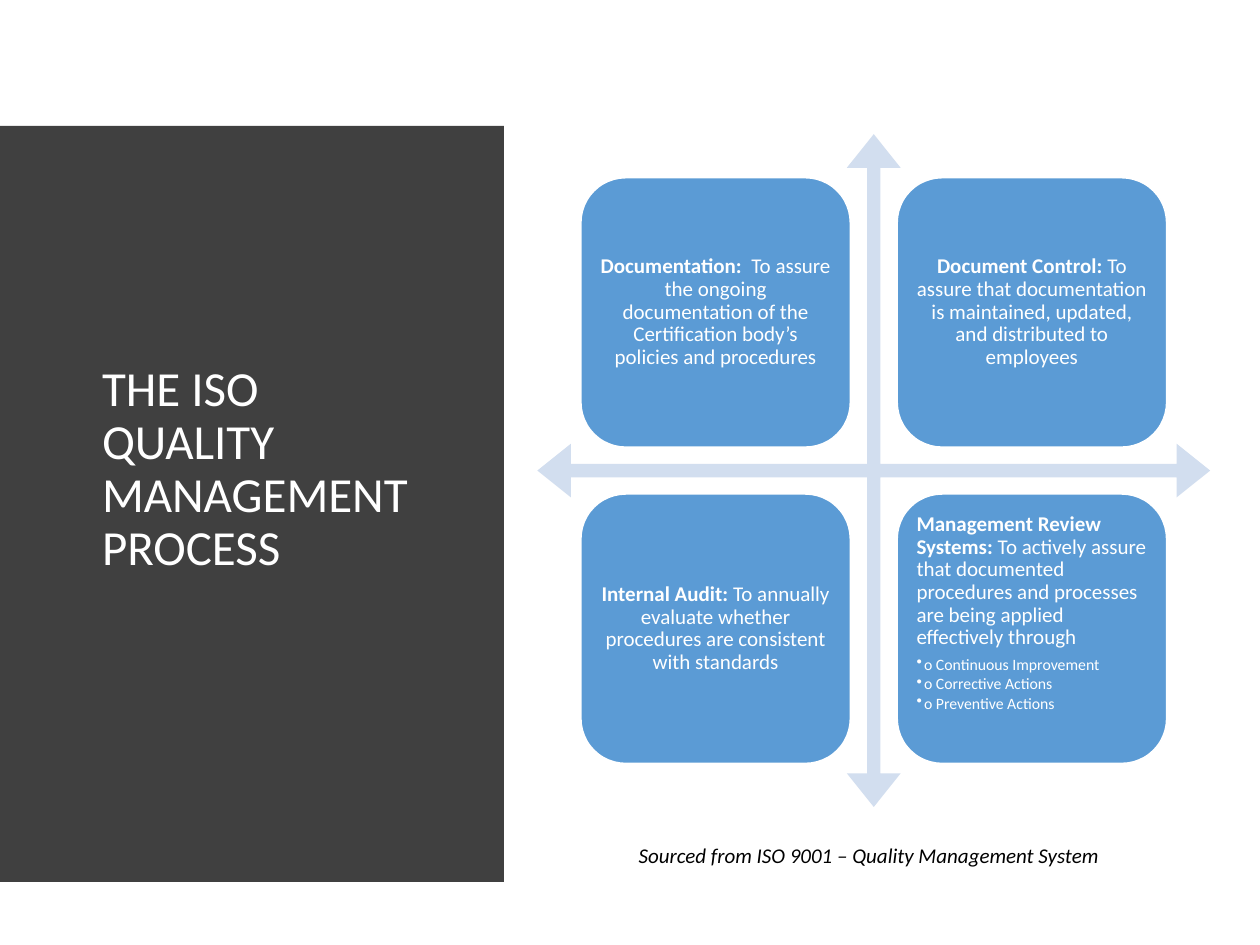
from dataclasses import dataclass

from lxml import etree
from pptx import Presentation
from pptx import util as u
from pptx.dml.color import RGBColor
from pptx.enum import shapes, text
from pptx.oxml.ns import qn


@dataclass(frozen=True)
class Theme:
    font: str = "Calibri"
    panel: str = "404040"
    card: str = "5B9BD5"
    arrows: str = "D2DEEF"
    light: str = "FFFFFF"
    dark: str = "000000"
    title_size: int = 28
    body_size: int = 12
    bullet_size: int = 9
    line_spacing: float = 0.9


@dataclass(frozen=True)
class Card:
    col: int
    row: int
    heading: str
    body: str
    bullets: tuple[str, ...] = ()


THEME = Theme()
WIDTH, HEIGHT = 10, 7.5
GRID_LEFT, GRID_TOP = 4.61, 1.41
CARD_SIZE, CARD_PITCH = 2.14, 2.51
ARROW_SIZE = 5.34

CARDS = (
    Card(0, 0, "Documentation:  ",
         "To assure the ongoing documentation of the Certification body’s policies and procedures"),
    Card(1, 0, "Document Control: ",
         "To assure that documentation is maintained, updated, and distributed to employees"),
    Card(0, 1, "Internal Audit: ",
         "To annually evaluate whether procedures are consistent with standards"),
    Card(1, 1, "Management Review Systems: ",
         "To actively assure that documented procedures and processes are being applied "
         "effectively through",
         ("o Continuous Improvement", "o Corrective Actions", "o Preventive Actions")),
)


def paint(sp, fill: str, line: str | None = None) -> None:
    sp.shadow.inherit = False
    sp.fill.solid()
    sp.fill.fore_color.rgb = RGBColor.from_string(fill)
    if line:
        sp.line.color.rgb = RGBColor.from_string(line)
        sp.line.width = u.Pt(1)
    else:
        sp.line.fill.background()


def add_run(p, content: str, size: float, color: str, bold: bool = False, italic: bool = False) -> None:
    r = p.add_run()
    r.text = content
    r.font.name = THEME.font
    r.font.size = u.Pt(size)
    r.font.bold = bold
    r.font.italic = italic
    r.font.color.rgb = RGBColor.from_string(color)


def add_bullet(p) -> None:
    """Give the paragraph a bullet; call after its spacing is set."""
    p.level = 1
    props = p._p.get_or_add_pPr()
    props.set("marL", str(u.Inches(0.06)))
    props.set("indent", str(-u.Inches(0.06)))
    etree.SubElement(props, qn("a:buChar")).set("char", "•")


def add_panel(s) -> None:
    """Draw the dark panel, whose right side bulges as a parabola, behind the title."""
    left, top, bottom = 0.04 * WIDTH, 0.52, 6.96
    edge, bulge, steps = 3.81, 0.18, 40
    curve = []
    for i in range(steps + 1):
        t = 2 * i / steps - 1
        curve.append((edge + bulge * (1 - t * t), top + (bottom - top) * i / steps))
    builder = s.shapes.build_freeform(left, top, scale=u.Inches(1))
    builder.add_line_segments([*curve, (left, bottom)], close=True)
    sp = builder.convert_to_shape()
    paint(sp, THEME.panel)
    s.shapes.title.element.addprevious(sp.element)


def format_title(s, content: str) -> None:
    sp = s.shapes.title
    sp.left, sp.top = u.Inches(0.71), u.Inches(1.11)
    sp.width, sp.height = u.Inches(0.28 * WIDTH), u.Inches(5.24)
    tf = sp.text_frame
    tf.word_wrap = True
    tf.auto_size = text.MSO_AUTO_SIZE.NONE
    tf.vertical_anchor = text.MSO_ANCHOR.MIDDLE
    p = tf.paragraphs[0]
    p.alignment = text.PP_ALIGN.LEFT
    p.line_spacing = THEME.line_spacing
    add_run(p, content, THEME.title_size, THEME.light)


def add_arrows(s) -> None:
    """Centre the four-way arrow on the grid of cards."""
    offset = (CARD_SIZE + CARD_PITCH - ARROW_SIZE) / 2
    sp = s.shapes.add_shape(
        shapes.MSO_SHAPE.QUAD_ARROW, u.Inches(GRID_LEFT + offset), u.Inches(GRID_TOP + offset),
        u.Inches(ARROW_SIZE), u.Inches(ARROW_SIZE))
    for i, value in enumerate((0.02, 0.04, 0.05)):
        sp.adjustments[i] = value
    paint(sp, THEME.arrows)


def add_card(s, card: Card) -> None:
    sp = s.shapes.add_shape(
        shapes.MSO_SHAPE.ROUNDED_RECTANGLE,
        u.Inches(GRID_LEFT + card.col * CARD_PITCH), u.Inches(GRID_TOP + card.row * CARD_PITCH),
        u.Inches(CARD_SIZE), u.Inches(CARD_SIZE))
    paint(sp, THEME.card, THEME.light)
    tf = sp.text_frame
    tf.word_wrap = True
    tf.margin_left = tf.margin_top = tf.margin_right = tf.margin_bottom = u.Inches(0.05)
    tf.vertical_anchor = text.MSO_ANCHOR.TOP if card.bullets else text.MSO_ANCHOR.MIDDLE
    p = tf.paragraphs[0]
    p.alignment = text.PP_ALIGN.LEFT if card.bullets else text.PP_ALIGN.CENTER
    p.line_spacing = THEME.line_spacing
    p.space_after = u.Pt(0.35 * THEME.body_size)
    add_run(p, card.heading, THEME.body_size, THEME.light, bold=True)
    add_run(p, card.body, THEME.body_size, THEME.light)
    for item in card.bullets:
        p = tf.add_paragraph()
        p.alignment = text.PP_ALIGN.LEFT
        p.line_spacing = THEME.line_spacing
        p.space_after = u.Pt(0.15 * THEME.bullet_size)
        add_bullet(p)
        add_run(p, item, THEME.bullet_size, THEME.light)


def add_source_note(s, content: str) -> None:
    sp = s.shapes.add_textbox(u.Inches(4.97), u.Inches(6.64), u.Inches(3.98), u.Inches(0.3))
    tf = sp.text_frame
    tf.word_wrap = True
    tf.auto_size = text.MSO_AUTO_SIZE.SHAPE_TO_FIT_TEXT
    add_run(tf.paragraphs[0], content, THEME.body_size, THEME.dark, italic=True)


def main() -> None:
    prs = Presentation()
    prs.slide_width, prs.slide_height = u.Inches(WIDTH), u.Inches(HEIGHT)
    s = prs.slides.add_slide(prs.slide_layouts.get_by_name("Title Only"))
    add_panel(s)
    format_title(s, "THE ISO QUALITY MANAGEMENT PROCESS")
    add_arrows(s)
    for card in CARDS:
        add_card(s, card)
    add_source_note(s, "Sourced from ISO 9001 – Quality Management System")
    prs.save("out.pptx")


if __name__ == "__main__":
    main()
